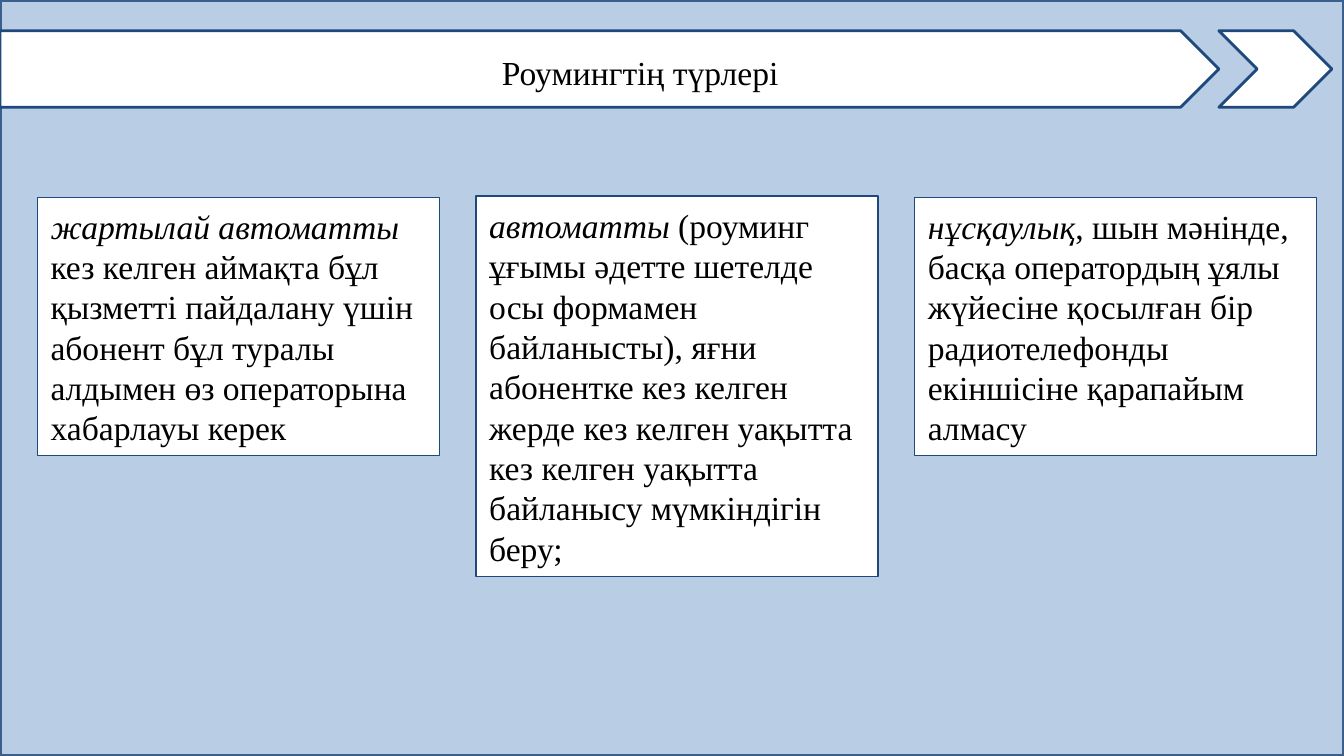
from pptx import Presentation
from pptx.dml.color import RGBColor
from pptx.enum.shapes import MSO_SHAPE
from pptx.enum.text import MSO_ANCHOR, MSO_AUTO_SIZE, PP_ALIGN
from pptx.util import Pt

RECTANGLE, PENTAGON, CHEVRON = MSO_SHAPE.RECTANGLE, MSO_SHAPE.PENTAGON, MSO_SHAPE.CHEVRON
LEFT, CENTER = PP_ALIGN.LEFT, PP_ALIGN.CENTER
MIDDLE = MSO_ANCHOR.MIDDLE
NO_FIT, FIT_SHAPE = MSO_AUTO_SIZE.NONE, MSO_AUTO_SIZE.SHAPE_TO_FIT_TEXT

COLORS = {
    "background": "B9CDE5",
    "frame": "3A5F8C",
    "outline": "1F497D",
    "panel": "FFFFFF",
    "text": "000000",
}
SLIDE_WIDTH, SLIDE_HEIGHT = 720, 405
BANNER_TOP, BANNER_HEIGHT, BANNER_WIDTH = 16.5, 41, 653
CARD_LEFT, CARD_WIDTH, CARD_PITCH = 20, 215.5, 235

# Term, explanation, top and height of each card
ROAMING_TYPES = [
    ("жартылай автоматты", " кез келген аймақта бұл қызметті пайдалану үшін абонент "
     "бұл туралы алдымен өз операторына хабарлауы керек", 106, 138),
    ("автоматты", " (роуминг ұғымы әдетте шетелде осы формамен байланысты), яғни "
     "абонентке кез келген жерде кез келген уақытта кез келген уақытта байланысу "
     "мүмкіндігін беру;", 105, 204),
    ("нұсқаулық", ", шын мәнінде, басқа оператордың ұялы жүйесіне қосылған бір "
     "радиотелефонды екіншісіне қарапайым алмасу", 106, 138),
]


def add_run(paragraph, text, *, italic=False, size=18, color="text"):
    run = paragraph.add_run()
    run.text = text
    run.font.name = "Times New Roman"
    run.font.size = Pt(size)
    run.font.italic = italic
    run.font.bold = False
    run.font.color.rgb = RGBColor.from_string(COLORS[color])


class SlideBuilder:
    """Holds the slide and draws its elements in one style."""

    def __init__(self, slide):
        self.slide = slide

    def panel(self, kind, left, top, width, height, *, fill="panel", line="outline", weight=1.5):
        shape = self.slide.shapes.add_shape(kind, Pt(left), Pt(top), Pt(width), Pt(height))
        shape.shadow.inherit = False
        shape.fill.solid()
        shape.fill.fore_color.rgb = RGBColor.from_string(COLORS[fill])
        shape.line.color.rgb = RGBColor.from_string(COLORS[line])
        shape.line.width = Pt(weight)
        return shape

    def title(self, text, left, top, width, height):
        """Fill the title placeholder and bring it in front of the banner."""
        shape = self.slide.shapes.title
        shape.left, shape.top, shape.width, shape.height = Pt(left), Pt(top), Pt(width), Pt(height)
        frame = shape.text_frame
        frame.word_wrap = False
        frame.auto_size = NO_FIT
        frame.vertical_anchor = MIDDLE
        paragraph = frame.paragraphs[0]
        paragraph.alignment = CENTER
        paragraph.line_spacing = 1.25
        add_run(paragraph, text)
        self.slide.shapes.element.append(shape.element)

    def card(self, term, explanation, left, top, width, height):
        shape = self.panel(RECTANGLE, left, top, width, height, weight=0.75)
        frame = shape.text_frame
        frame.word_wrap = True
        frame.auto_size = FIT_SHAPE
        frame.vertical_anchor = MIDDLE
        paragraph = frame.paragraphs[0]
        paragraph.alignment = LEFT
        paragraph.line_spacing = 1.0
        add_run(paragraph, term, italic=True)
        add_run(paragraph, explanation)


def main():
    presentation = Presentation()
    presentation.slide_width, presentation.slide_height = Pt(SLIDE_WIDTH), Pt(SLIDE_HEIGHT)
    title_only = presentation.slide_layouts[5]
    builder = SlideBuilder(presentation.slides.add_slide(title_only))

    builder.panel(RECTANGLE, 0, 0, SLIDE_WIDTH, SLIDE_HEIGHT,
                  fill="background", line="frame", weight=2)
    builder.panel(PENTAGON, 0, BANNER_TOP, BANNER_WIDTH, BANNER_HEIGHT)
    builder.panel(CHEVRON, BANNER_WIDTH, BANNER_TOP, 60.5, BANNER_HEIGHT)
    builder.title("Роумингтің түрлері", 261, 20, 164, 32)

    for column, (term, explanation, top, height) in enumerate(ROAMING_TYPES):
        left = CARD_LEFT + column * CARD_PITCH
        builder.card(term, explanation, left, top, CARD_WIDTH, height)

    presentation.save("out.pptx")


if __name__ == "__main__":
    main()
